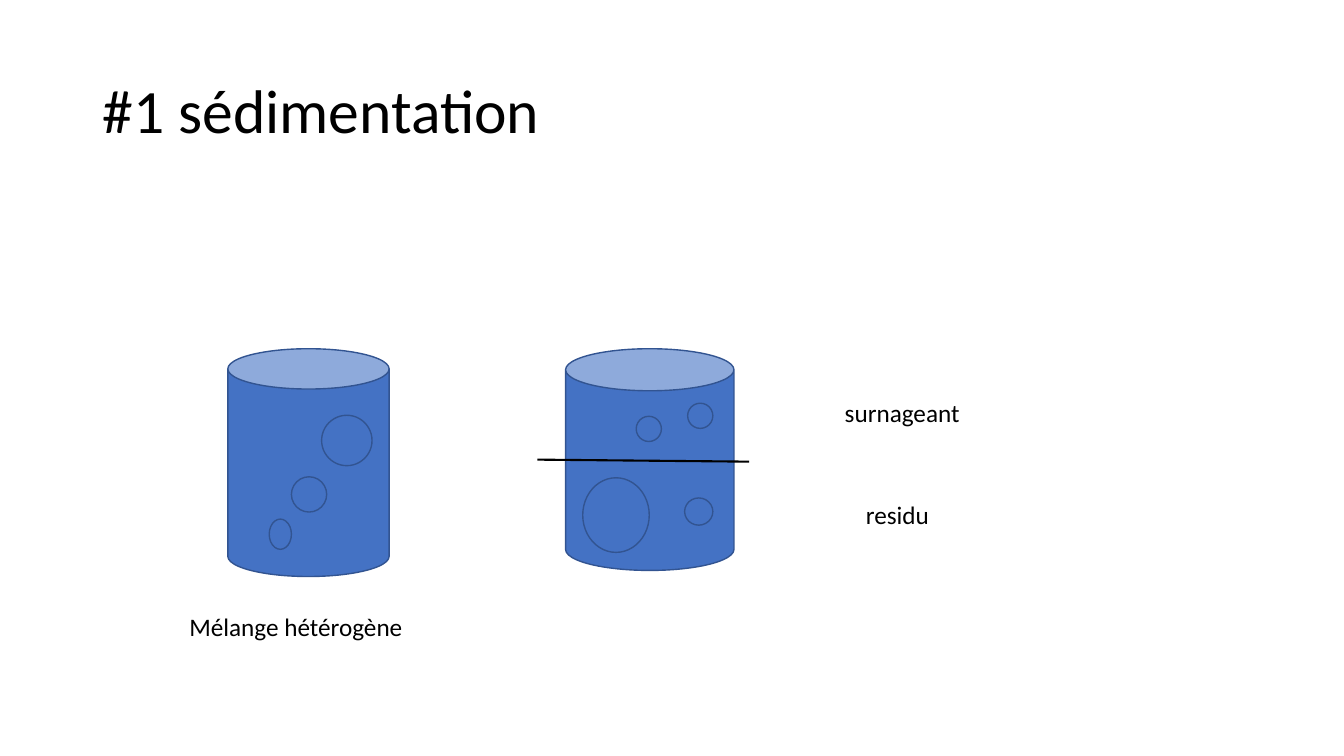
import pptx
import pptx.util
import pptx.dml.color
import pptx.enum.shapes
import pptx.enum.text
import pptx.oxml.ns
from lxml import etree
from pptx.util import Inches

COLORS = {"liquid": "4472C4", "outline": "325491", "ink": "000000"}
SHAPES = pptx.enum.shapes.MSO_SHAPE

BEAKERS = [(2.26, 3.46, 1.6, 2.26), (5.61, 3.46, 1.67, 2.2)]
PARTICLES = [
    # Mixed
    (2.89, 4.73, 0.35, 0.35),
    (3.19, 4.12, 0.5, 0.5),
    (2.67, 5.15, 0.22, 0.3),
    # Settled
    (6.82, 4, 0.25, 0.25),
    (6.79, 4.94, 0.28, 0.27),
    (5.78, 4.74, 0.66, 0.74),
    (6.31, 4.13, 0.25, 0.25),
]
LABELS = [
    ("Mélange hétérogène", (1.78, 6.02, 2.5, 0.4)),
    ("surnageant", (8.28, 3.89, 1.56, 0.4)),
    ("residu", (8.49, 4.9, 1.53, 0.4)),
]


def color(name):
    return pptx.dml.color.RGBColor.from_string(COLORS[name])


def add_solid(page, kind, frame):
    """Add a liquid-coloured shape with a thin outline."""
    shape = page.shapes.add_shape(kind, *map(Inches, frame))
    shape.shadow.inherit = False
    shape.fill.solid()
    shape.fill.fore_color.rgb = color("liquid")
    shape.line.color.rgb = color("outline")
    shape.line.width = pptx.util.Pt(1)


def add_text(page, text, frame, size=18):
    box = page.shapes.add_textbox(*map(Inches, frame))
    box.text_frame.word_wrap = True
    para = box.text_frame.paragraphs[0]
    para.text = text
    para.font.name = "Calibri"
    para.font.size = pptx.util.Pt(size)
    para.font.color.rgb = color("ink")
    return box


def add_title(page, text):
    box = add_text(page, text, (0.92, 0.4, 11.5, 1.45), 44)
    box.text_frame.vertical_anchor = pptx.enum.text.MSO_ANCHOR.MIDDLE
    box.text_frame.paragraphs[0].line_spacing = 0.9


def add_line(page, start, end):
    line = page.shapes.add_connector(
        pptx.enum.shapes.MSO_CONNECTOR.STRAIGHT, *map(Inches, start + end)
    )
    line.line.color.rgb = color("ink")
    line.line.width = pptx.util.Pt(1.5)
    properties = line.element.find(pptx.oxml.ns.qn("p:spPr"))
    etree.SubElement(properties, pptx.oxml.ns.qn("a:effectLst"))


def main():
    deck = pptx.Presentation()
    deck.slide_width, deck.slide_height = Inches(13.33), Inches(7.5)
    page = deck.slides.add_slide(deck.slide_layouts[6])

    add_title(page, "#1 sédimentation")
    for frame in BEAKERS:
        add_solid(page, SHAPES.CAN, frame)
    for frame in PARTICLES:
        add_solid(page, SHAPES.FLOWCHART_CONNECTOR, frame)
    for text, frame in LABELS:
        add_text(page, text, frame)
    add_line(page, (5.33, 4.56), (7.43, 4.58))

    deck.save("out.pptx")


if __name__ == "__main__":
    main()
